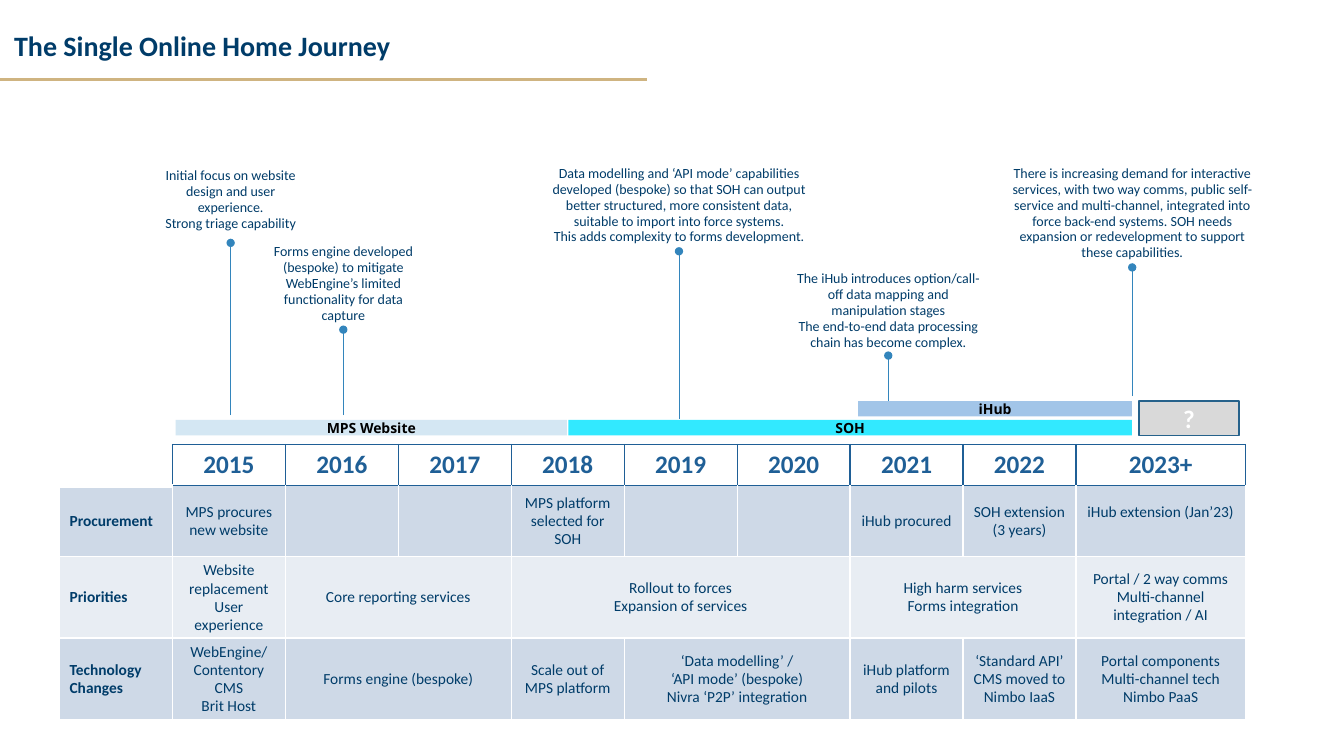
from dataclasses import dataclass
from typing import Any

import lxml.etree
import pptx
import pptx.dml.color
import pptx.enum.shapes
import pptx.enum.text
import pptx.oxml.ns
import pptx.util

Pt = pptx.util.Pt
ALIGN = pptx.enum.text.PP_ALIGN
MIDDLE = pptx.enum.text.MSO_ANCHOR.MIDDLE
SHAPES = pptx.enum.shapes.MSO_SHAPE
STRAIGHT = pptx.enum.shapes.MSO_CONNECTOR.STRAIGHT

NAVY, BLUE, WHITE = "003C69", "1F5F96", "FFFFFF"
ROW_FILLS = [WHITE, "CED9E7", "E8EDF3", "CED9E7"]
ROW_HEIGHTS = [29.5, 50.5, 58.25, 58.25]
YEARS = ["2015", "2016", "2017", "2018", "2019", "2020", "2021", "2022", "2023+"]
ROW_LABELS = ["Procurement", "Priorities", "Technology Changes"]
YEAR_WIDTH, LAST_WIDTH = 80.7, 121


@dataclass
class Style:
    size: float
    color: str
    bold: bool = False
    spacing: float = 1.0
    align: Any = ALIGN.CENTER
    font: str = "Calibri"


@dataclass
class Bar:
    text: str
    left: float
    top: float
    width: float
    fill: str


@dataclass
class Note:
    text: str
    left: float
    top: float
    width: float
    height: float
    stem_foot: float


@dataclass
class Entry:
    row: int
    column: int
    text: str
    span: int = 1


HEADING = Style(20, NAVY, True, 0.9, ALIGN.LEFT)
NOTE_STYLE = Style(10, NAVY, spacing=0.95)
BAR_STYLE = Style(10, "000000", True, 1.06, font="Open Sans")
YEAR_STYLE = Style(18, BLUE, True)
UNKNOWN_STYLE = Style(18, WHITE, True)
LABEL_STYLE = Style(11, NAVY, True, 0.95, ALIGN.LEFT)
ENTRY_STYLE = Style(11, NAVY, spacing=0.95)

BARS = [
    Bar("MPS Website", 125.5, 300, 279.5, "D4E7F3"),
    Bar("SOH", 406, 300, 402.5, "32E9FF"),
    Bar("iHub", 613, 286.5, 195.5, "A2C5E8"),
]

NOTES = [
    Note("Initial focus on website design and user experience.\nStrong triage capability",
         107.5, 116, 114.5, 57.5, 296.5),
    Note("Forms engine developed (bespoke) to mitigate WebEngine’s limited "
         "functionality for data capture", 188, 170.5, 114.5, 65, 296.5),
    Note("Data modelling and ‘API mode’ capabilities developed (bespoke) so that SOH can "
         "output better structured, more consistent data, suitable to import into force "
         "systems.\nThis adds complexity to forms development.", 387.5, 114.5, 195, 65, 299),
    Note("The iHub introduces option/call-off data mapping and manipulation stages\n"
         "The end-to-end data processing chain has become complex.",
         558.5, 189.5, 152, 64.5, 286.5),
    Note("There is increasing demand for interactive services, with two way comms, public "
         "self-service and multi-channel, integrated into force back-end systems. SOH needs "
         "expansion or redevelopment to support these capabilities.",
         710, 114.5, 197.5, 76.5, 283),
]

ENTRIES = [
    Entry(1, 1, "MPS procures new website"),
    Entry(1, 4, "MPS platform selected for SOH"),
    Entry(1, 7, "iHub procured"),
    Entry(1, 8, "SOH extension\v(3 years)"),
    Entry(1, 9, "iHub extension (Jan’23)"),
    Entry(2, 1, "Website replacement\nUser experience"),
    Entry(2, 2, "Core reporting services", 2),
    Entry(2, 4, "Rollout to forces\nExpansion of services", 3),
    Entry(2, 7, "High harm services\nForms integration", 2),
    Entry(2, 9, "Portal / 2 way comms\vMulti-channel integration / AI"),
    Entry(3, 1, "WebEngine/ Contentory CMS\nBrit Host"),
    Entry(3, 2, "Forms engine (bespoke)", 2),
    Entry(3, 4, "Scale out of MPS platform"),
    Entry(3, 5, "‘Data modelling’ /\n‘API mode’ (bespoke)\nNivra ‘P2P’ integration", 2),
    Entry(3, 7, "iHub platform and pilots"),
    Entry(3, 8, "‘Standard API’\nCMS moved to Nimbo IaaS"),
    Entry(3, 9, "Portal components\nMulti-channel tech\nNimbo PaaS"),
]


def rgb(value: str) -> pptx.dml.color.RGBColor:
    return pptx.dml.color.RGBColor.from_string(value)


def write(frame: Any, text: str, style: Style) -> None:
    frame.word_wrap = True
    frame.text = text
    for para in frame.paragraphs:
        para.alignment = style.align
        para.line_spacing = style.spacing
        para.font.name = style.font
        para.font.size = Pt(style.size)
        para.font.bold = style.bold
        para.font.color.rgb = rgb(style.color)


def add_child(parent: Any, tag: str, **attributes: str) -> Any:
    return lxml.etree.SubElement(parent, pptx.oxml.ns.qn(tag), attributes)


def add_line(page: Any, start: tuple, end: tuple, color: str, width: float) -> Any:
    line = page.shapes.add_connector(STRAIGHT, *start, *end)
    line.line.color.rgb = rgb(color)
    line.line.width = Pt(width)
    add_child(line._element.spPr, "a:effectLst")
    return line


def add_text(page: Any, text: str, style: Style, *bounds: float) -> Any:
    box = page.shapes.add_textbox(*map(Pt, bounds))
    write(box.text_frame, text, style)
    return box


def add_block(page: Any, kind: Any, text: str, style: Style, fill: str, *bounds: float) -> Any:
    block = page.shapes.add_shape(kind, *map(Pt, bounds))
    block.shadow.inherit = False
    block.fill.solid()
    block.fill.fore_color.rgb = rgb(fill)
    block.line.fill.background()
    write(block.text_frame, text, style)
    block.text_frame.vertical_anchor = MIDDLE
    return block


def add_bar(page: Any, bar: Bar) -> None:
    block = add_block(page, SHAPES.ROUNDED_RECTANGLE, bar.text, BAR_STYLE, bar.fill,
                      bar.left, bar.top, bar.width, 11)
    block.adjustments[0] = 0
    block.text_frame.margin_top = block.text_frame.margin_bottom = Pt(7.2)


def add_note(page: Any, note: Note) -> None:
    box = add_text(page, note.text, NOTE_STYLE, note.left, note.top, note.width, note.height)
    center = box.left + box.width // 2
    stem = add_line(page, (center, Pt(note.stem_foot)), (center, box.top + box.height),
                    "3385BC", 0.5)
    stem.end_connect(box, 2)
    add_child(stem._element.spPr.find(pptx.oxml.ns.qn("a:ln")), "a:tailEnd", type="oval")


def style_cell(cell: Any, row: int, column: int) -> None:
    year = row == 0 and column > 0
    edges = {
        "L": (BLUE if year else WHITE, 1),
        "R": (BLUE if row == 0 else WHITE, 1),
        "T": (BLUE if year or (row == 1 and column > 0) else WHITE,
              3 if (row, column) == (1, 0) else 1),
        "B": (BLUE if year else WHITE, 3 if (row, column) == (0, 0) else 1),
    }
    properties = cell._tc.get_or_add_tcPr()
    for side, (color, width) in edges.items():
        edge = add_child(properties, f"a:ln{side}", w=str(Pt(width)))
        add_child(add_child(edge, "a:solidFill"), "a:srgbClr", val=color)
    cell.fill.solid()
    cell.fill.fore_color.rgb = rgb(ROW_FILLS[row])
    cell.vertical_anchor = MIDDLE


def add_timeline(page: Any) -> None:
    widths = [YEAR_WIDTH] * len(YEARS) + [LAST_WIDTH]
    bounds = (42.5, 317.5, sum(widths), sum(ROW_HEIGHTS))
    table = page.shapes.add_table(len(ROW_HEIGHTS), len(widths), *map(Pt, bounds)).table
    for column, width in enumerate(widths):
        table.columns[column].width = Pt(width)
    for row, height in enumerate(ROW_HEIGHTS):
        table.rows[row].height = Pt(height)
        for column in range(len(widths)):
            style_cell(table.cell(row, column), row, column)
    for column, year in enumerate(YEARS, 1):
        write(table.cell(0, column).text_frame, year, YEAR_STYLE)
    for row, label in enumerate(ROW_LABELS, 1):
        write(table.cell(row, 0).text_frame, label, LABEL_STYLE)
    for entry in ENTRIES:
        cell = table.cell(entry.row, entry.column)
        if entry.span > 1:
            cell.merge(table.cell(entry.row, entry.column + entry.span - 1))
        write(cell.text_frame, entry.text, ENTRY_STYLE)
    table.cell(1, 9).margin_bottom = Pt(16.5)


def main() -> None:
    deck = pptx.Presentation()
    deck.slide_width, deck.slide_height = Pt(960), Pt(540)
    page = deck.slides.add_slide(deck.slide_layouts[6])
    add_line(page, (Pt(0), Pt(57)), (Pt(462), Pt(57)), "CFB481", 2.25)
    title = add_text(page, "The Single Online Home Journey", HEADING, 3, 3.5, 466, 61)
    title.text_frame.vertical_anchor = MIDDLE
    add_timeline(page)
    for bar in BARS:
        add_bar(page, bar)
    unknown = add_block(page, SHAPES.RECTANGLE, "?", UNKNOWN_STYLE, "D9D9D9",
                        813.5, 286.5, 71.5, 24.5)
    unknown.line.color.rgb = rgb("26628B")
    unknown.line.width = Pt(1)
    for note in NOTES:
        add_note(page, note)
    deck.save("out.pptx")


if __name__ == "__main__":
    main()
